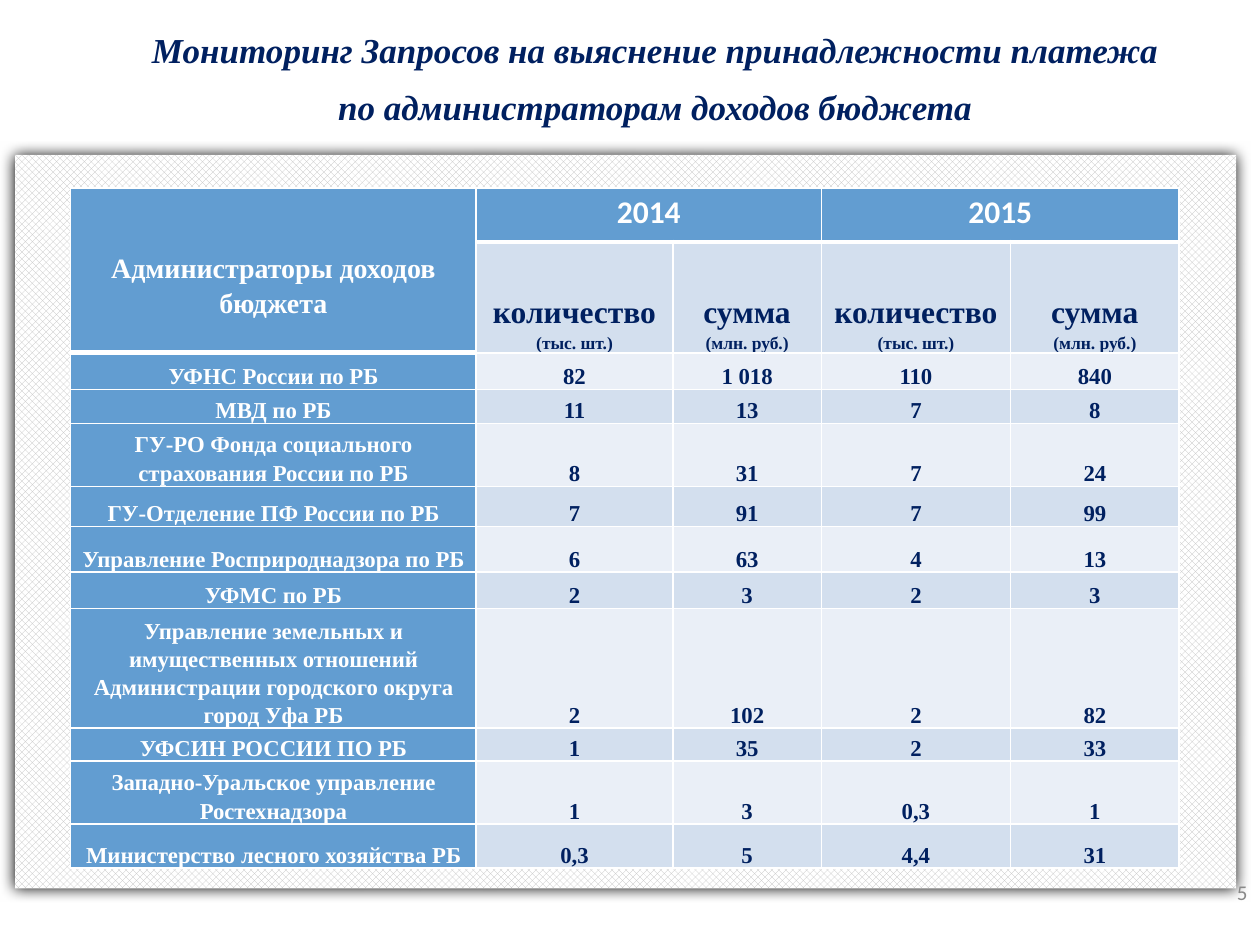
from lxml.etree import SubElement
from pptx import Presentation
from pptx.dml.color import RGBColor
from pptx.enum.dml import MSO_PATTERN
from pptx.enum.shapes import MSO_SHAPE
from pptx.enum.text import MSO_ANCHOR, PP_ALIGN
from pptx.oxml.ns import qn
from pptx.util import Inches, Pt

COLORS = {
    "navy": "002060", "white": "FFFFFF", "blue": "629DD1", "band": "D3DFEE",
    "light": "EAEFF7", "hatch": "BFBFBF", "gray": "898989", "black": "000000",
}
SERIF, SANS = "Times New Roman", "Calibri"

TITLE = ["Мониторинг Запросов на выяснение принадлежности платежа",
         "по администраторам доходов бюджета"]
YEARS = ["2014", "2015"]
MEASURES = [("количество", "(тыс. шт.)"), ("сумма", "(млн. руб.)")]
ROWS = [
    ("УФНС России по РБ", "82", "1 018", "110", "840"),
    ("МВД по РБ", "11", "13", "7", "8"),
    ("ГУ-РО Фонда социального страхования России по РБ", "8", "31", "7", "24"),
    ("ГУ-Отделение ПФ России по РБ", "7", "91", "7", "99"),
    ("Управление Росприроднадзора по РБ", "6", "63", "4", "13"),
    ("УФМС по РБ", "2", "3", "2", "3"),
    ("Управление земельных и имущественных отношений Администрации "
     "городского округа город Уфа РБ", "2", "102", "2", "82"),
    ("УФСИН РОССИИ ПО РБ", "1", "35", "2", "33"),
    ("Западно-Уральское управление Ростехнадзора", "1", "3", "0,3", "1"),
    ("Министерство лесного хозяйства РБ", "0,3", "5", "4,4", "31"),
]
COL_WIDTHS = [3.22, 1.56, 1.18, 1.5, 1.34]
ROW_HEIGHTS = [0.43, 0.88, 0.29, 0.27, 0.5, 0.32, 0.36, 0.29, 0.95, 0.26, 0.5, 0.35]


def rgb(name):
    return RGBColor.from_string(COLORS[name])


def style(p, size, color, font=SERIF, bold=True, italic=False,
          align=PP_ALIGN.CENTER, spacing=1.15):
    p.alignment = align
    p.line_spacing = spacing
    p.font.size = Pt(size)
    p.font.name = font
    p.font.bold = bold
    p.font.italic = italic
    p.font.color.rgb = rgb(color)


def add_panel(slide, left, top, width, height):
    sp = slide.shapes.add_shape(MSO_SHAPE.RECTANGLE, left, top, width, height)
    sp.fill.patterned()
    sp.fill.pattern = MSO_PATTERN.OUTLINED_DIAMOND
    sp.fill.fore_color.rgb = rgb("hatch")
    sp.fill.back_color.rgb = rgb("white")
    sp.line.fill.background()
    sp.shadow.inherit = False
    effects = sp._element.spPr.find(qn("a:effectLst"))
    shadow = SubElement(effects, qn("a:outerShdw"), blurRad=str(Pt(8.5)),
                        dist=str(Pt(1)), dir="5400000", algn="t", rotWithShape="0")
    SubElement(shadow, qn("a:srgbClr"), val=COLORS["black"])


def add_title(slide, left, top, width, height):
    tf = slide.shapes.add_textbox(left, top, width, height).text_frame
    tf.word_wrap = True
    for i, line in enumerate(TITLE):
        p = tf.add_paragraph() if i else tf.paragraphs[0]
        p.text = line
        style(p, 20, "navy", italic=True)
        if i:
            p.space_before = Pt(5)


def add_page_number(slide, left, top, width, height):
    tf = slide.shapes.add_textbox(left, top, width, height).text_frame
    tf.word_wrap = True
    tf.vertical_anchor = MSO_ANCHOR.MIDDLE
    p = tf.paragraphs[0]
    p.text = "5"
    style(p, 12, "gray", SANS, bold=False, align=PP_ALIGN.RIGHT, spacing=1.0)


def add_borders(cell, sides):
    for side, width in sides.items():
        ln = SubElement(cell._tc.get_or_add_tcPr(), qn(f"a:ln{side}"), w=str(Pt(width)))
        SubElement(SubElement(ln, qn("a:solidFill")), qn("a:srgbClr"), val=COLORS["white"])


def format_cell(cell, fill, anchor=MSO_ANCHOR.BOTTOM):
    cell.fill.solid()
    cell.fill.fore_color.rgb = rgb(fill)
    cell.vertical_anchor = anchor
    cell.margin_left = cell.margin_right = Inches(0.07)
    cell.margin_top = cell.margin_bottom = 0


def fill_cell(cell, text, size, color, font=SERIF, spacing=1.15):
    p = cell.text_frame.paragraphs[0]
    p.text = text
    style(p, size, color, font, spacing=spacing)


def fill_header(table):
    corner = table.cell(0, 0)
    corner.merge(table.cell(1, 0))
    fill_cell(corner, "Администраторы доходов бюджета", 16, "white")
    corner.margin_bottom = Inches(0.26)
    for i, year in enumerate(YEARS):
        col = 1 + 2 * i
        cell = table.cell(0, col)
        cell.merge(table.cell(0, col + 1))
        cell.vertical_anchor = MSO_ANCHOR.TOP
        fill_cell(cell, year, 18, "white", SANS)
        for j, (measure, unit) in enumerate(MEASURES):
            sub = table.cell(1, col + j)
            fill_cell(sub, measure, 18, "navy")
            p = sub.text_frame.add_paragraph()
            p.text = unit
            style(p, 10, "navy")


def add_data_table(slide, left, top, width, height):
    frame = slide.shapes.add_table(len(ROW_HEIGHTS), len(COL_WIDTHS),
                                   left, top, width, height)
    table = frame.table
    table.first_row = table.horz_banding = False
    for column, w in zip(table.columns, COL_WIDTHS):
        column.width = Inches(w)
    for r, (row, h) in enumerate(zip(table.rows, ROW_HEIGHTS)):
        row.height = Inches(h)
        for c, cell in enumerate(row.cells):
            is_head = r == 0 or c == 0
            thick = r == 0 or (r == 1 and c == 0)
            sides = {"L": 1, "R": 1, "T": 1, "B": 3 if thick else 1}
            if r == 1 or (r == 2 and c == 0):
                del sides["T"]
            add_borders(cell, sides)
            format_cell(cell, "blue" if is_head else "band" if r % 2 else "light")
    fill_header(table)
    for r, values in enumerate(ROWS, start=2):
        for c, value in enumerate(values):
            spacing = Pt(16) if len(value) > 60 else 1.15
            fill_cell(table.cell(r, c), value, 13, "navy" if c else "white",
                      spacing=spacing)


def main():
    prs = Presentation()
    prs.slide_width, prs.slide_height = Inches(10), Inches(7.5)
    slide = prs.slides.add_slide(prs.slide_layouts[6])
    add_panel(slide, Inches(0.12), Inches(1.23), Inches(9.69), Inches(5.82))
    add_title(slide, Inches(0.67), Inches(0.13), Inches(9.06), Inches(0.94))
    add_page_number(slide, Inches(7.75), Inches(6.88), Inches(2.25), Inches(0.4))
    add_data_table(slide, Inches(0.56), Inches(1.49), Inches(8.8), Inches(5.4))
    prs.save("out.pptx")


if __name__ == "__main__":
    main()
